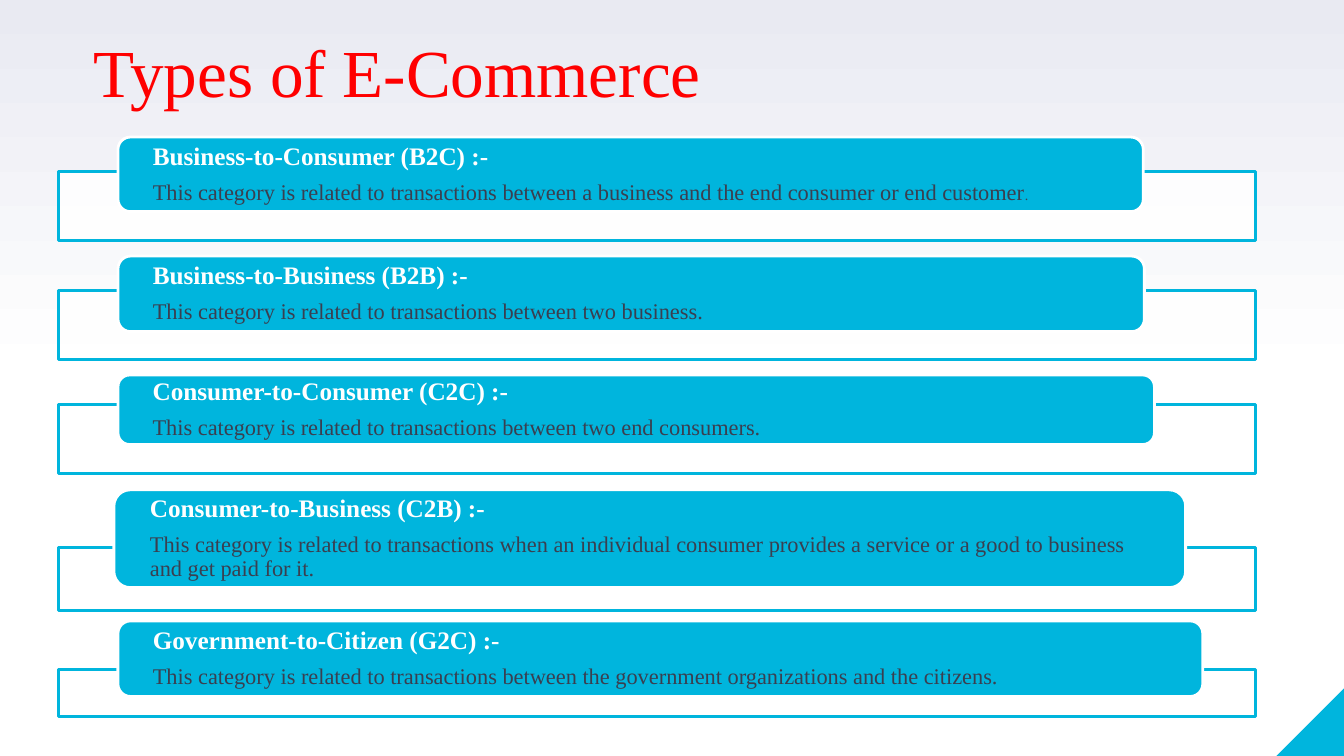
from copy import deepcopy

from lxml import etree
from pptx import Presentation
from pptx.dml.color import RGBColor
from pptx.enum.shapes import MSO_SHAPE
from pptx.enum.text import MSO_ANCHOR, MSO_AUTO_SIZE, PP_ALIGN
from pptx.oxml.ns import qn
from pptx.util import Inches, Pt

RECT, ROUNDED = MSO_SHAPE.RECTANGLE, MSO_SHAPE.ROUNDED_RECTANGLE
TRIANGLE = MSO_SHAPE.RIGHT_TRIANGLE
LEFT, TOP, MIDDLE = PP_ALIGN.LEFT, MSO_ANCHOR.TOP, MSO_ANCHOR.MIDDLE
NO_AUTOSIZE = MSO_AUTO_SIZE.NONE

CYAN = RGBColor(0x00, 0xB5, 0xDD)
WHITE = RGBColor(0xFF, 0xFF, 0xFF)
MIST = RGBColor(0xE9, 0xEA, 0xF2)
SLATE = RGBColor(0x3A, 0x3F, 0x50)
RED = RGBColor(0xFF, 0x00, 0x00)
FONT = "Times New Roman"

SLIDE_W, SLIDE_H = 13.33, 7.5
FRAME_LEFT, FRAME_WIDTH = 0.58, 11.87

# Heading, description, frame (top, height), label (left, top, width, height)
CATEGORIES = [
    ("Business-to-Consumer (B2C) :-",
     "This category is related to transactions between a business and the end "
     "consumer or end customer.",
     (1.7, 0.69), (1.17, 1.36, 10.17, 0.74)),
    ("Business-to-Business (B2B) :-",
     "This category is related to transactions between two business.",
     (2.88, 0.69), (1.17, 2.54, 10.18, 0.75)),
    ("Consumer-to-Consumer (C2C) :-",
     "This category is related to transactions between two end consumers.",
     (4.01, 0.69), (1.17, 3.72, 10.28, 0.69)),
    ("Consumer-to-Business (C2B) :-",
     "This category is related to transactions when an individual consumer "
     "provides a service or a good to business and get paid for it.",
     (5.43, 0.63), (1.13, 4.86, 10.63, 0.97)),
    ("Government-to-Citizen (G2C) :-",
     "This category is related to transactions between the government "
     "organizations and the citizens.",
     (6.64, 0.47), (1.17, 6.16, 10.76, 0.75)),
]


def add_block(slide, preset, box, fill, line=None):
    block = slide.shapes.add_shape(preset, *map(Inches, box))
    block.shadow.inherit = False
    block.fill.solid()
    block.fill.fore_color.rgb = fill
    if line is None:
        block.line.fill.background()
    else:
        block.line.color.rgb = line
        block.line.width = Pt(2)
    return block


def style_run(run, size, color, bold=False):
    run.font.name = FONT
    run.font.size = Pt(size)
    run.font.bold = bold
    run.font.color.rgb = color


def paint_background(slide):
    fill = slide.background.fill
    fill.gradient()
    fill.gradient_angle = 90
    for stop, position, color in zip(fill.gradient_stops, (0, 1), (WHITE, MIST)):
        stop.position = position
        stop.color.rgb = color
    # White holds up to the middle of the slide
    first = slide.background.fill.gradient_stops[0]
    stops = slide.element.find(".//" + qn("a:gsLst"))
    middle = deepcopy(stops[0])
    middle.set("pos", "50000")
    stops.insert(1, middle)
    first.position = 0


def add_corner(slide, size):
    box = (SLIDE_W - size, SLIDE_H - size, size, size)
    corner = add_block(slide, TRIANGLE, box, CYAN)
    corner.element.spPr.find(qn("a:xfrm")).set("flipH", "1")


def add_title(slide, box):
    title = slide.shapes.title
    title.left, title.top, title.width, title.height = map(Inches, box)
    frame = title.text_frame
    frame.text = "Types of E-Commerce"
    frame.auto_size = NO_AUTOSIZE
    frame.word_wrap = False
    frame.vertical_anchor = TOP
    heading = frame.paragraphs[0]
    heading.alignment = LEFT
    heading.line_spacing = 1.0
    heading.space_before = Pt(0)
    style_run(heading.runs[0], 48, RED)


def add_category(slide, heading, description, frame_span, label_box):
    # Outlined frame behind the label
    top, height = frame_span
    frame = add_block(slide, RECT, (FRAME_LEFT, top, FRAME_WIDTH, height), WHITE, CYAN)
    color = frame.element.spPr.find(qn("a:solidFill"))[0]
    etree.SubElement(color, qn("a:alpha")).set("val", "90000")

    # Label with heading and description
    label = add_block(slide, ROUNDED, label_box, CYAN, WHITE)
    text = label.text_frame
    text.word_wrap = True
    text.vertical_anchor = MIDDLE
    text.margin_left = text.margin_right = Inches(0.31)
    text.margin_top = text.margin_bottom = 0
    text.text = f"{heading}\n{description}"
    for paragraph in text.paragraphs:
        paragraph.alignment = LEFT
        paragraph.line_spacing = 0.9
    heading_line, description_line = text.paragraphs
    heading_line.space_after = Pt(7.5)
    style_run(heading_line.runs[0], 18, WHITE, bold=True)
    style_run(description_line.runs[0], 16, SLATE)
    return description_line


def shrink_full_stop(paragraph):
    sentence = paragraph.runs[0]
    sentence.text = sentence.text.removesuffix(".")
    full_stop = paragraph.add_run()
    full_stop.text = "."
    style_run(full_stop, 10, SLATE)


def main():
    prs = Presentation()
    prs.slide_width, prs.slide_height = Inches(SLIDE_W), Inches(SLIDE_H)
    slide = prs.slides.add_slide(prs.slide_layouts[5])
    paint_background(slide)
    add_corner(slide, 0.67)
    add_title(slide, (0.83, 0.25, 6.29, 0.91))
    descriptions = [add_category(slide, *category) for category in CATEGORIES]
    shrink_full_stop(descriptions[0])
    prs.save("out.pptx")


if __name__ == "__main__":
    main()
